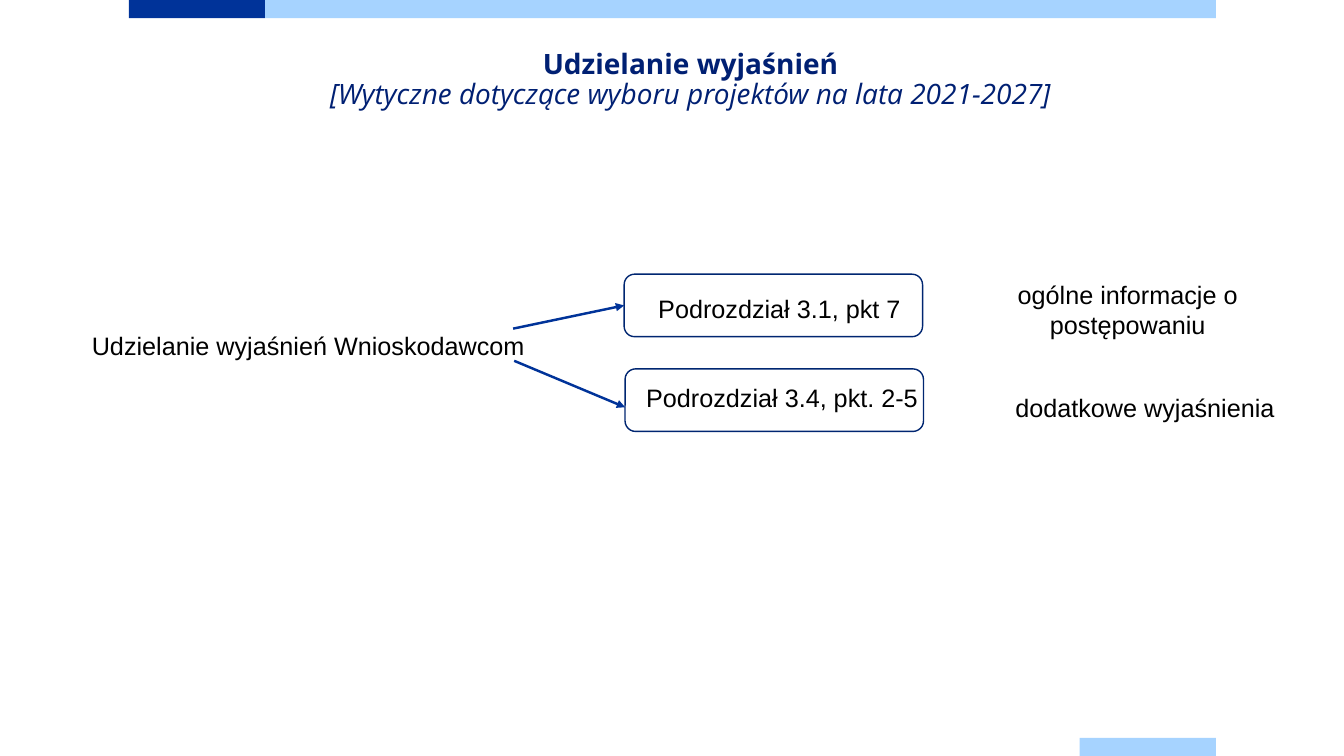
from pptx import Presentation
from pptx.dml.color import RGBColor
from pptx.enum.shapes import MSO_CONNECTOR, MSO_SHAPE
from pptx.enum.text import MSO_ANCHOR, MSO_AUTO_SIZE, PP_ALIGN
from pptx.oxml.ns import qn
from pptx.util import Inches, Pt
from lxml.etree import SubElement

WIDE, HIGH = Inches(13.33), Inches(7.5)
BLUE = RGBColor(0x00, 0x33, 0x99)
SKY = RGBColor(0xA6, 0xD3, 0xFF)
NAVY = RGBColor(0x00, 0x20, 0x73)
EDGE = RGBColor(0x00, 0x26, 0x71)
BLACK = RGBColor(0, 0, 0)
BAR_H = 2.4
BOX_W, BOX_H = 22.2, 8.27


def area(x, y, w, h):
    """Turn percentages of the slide into left, top, width and height."""
    return [int(side * part / 100)
            for side, part in zip((WIDE, HIGH, WIDE, HIGH), (x, y, w, h))]


def place(shape, *spot):
    shape.left, shape.top, shape.width, shape.height = area(*spot)


def style(para, size, name, color):
    for run in para.runs:
        font = run.font
        font.size, font.name = Pt(size), name
        font.color.rgb = color


def trim(frame):
    """Drop the insets and fix the text to the top of its frame."""
    frame.margin_left = frame.margin_right = 0
    frame.margin_top = frame.margin_bottom = 0
    frame.vertical_anchor = MSO_ANCHOR.TOP
    frame.auto_size = MSO_AUTO_SIZE.NONE


def add_bar(slide, x, y, w, color):
    bar = slide.shapes.add_shape(MSO_SHAPE.RECTANGLE, *area(x, y, w, BAR_H))
    bar.shadow.inherit = False
    bar.fill.solid()
    bar.fill.fore_color.rgb = color
    bar.line.fill.background()


def set_title(slide, head, note):
    title = slide.shapes.title
    place(title, 9.6, 6.67, 83.57, 14.27)
    frame = title.text_frame
    trim(frame)
    frame.text = f"{head}\n{note}"
    for para in frame.paragraphs:
        para.alignment = PP_ALIGN.CENTER
        para.line_spacing = 0.9
        style(para, 20, "Open Sans", NAVY)
    first, last = frame.paragraphs
    first.runs[0].font.bold = True
    last.runs[0].font.bold = False
    last.runs[0].font.italic = True


def set_body(slide, text):
    body = slide.placeholders[1]
    place(body, 6.83, 43.73, 36, 5)
    frame = body.text_frame
    trim(frame)
    frame.text = text
    para = frame.paragraphs[0]
    props = para._p.get_or_add_pPr()
    props.set("marL", "0")
    props.set("indent", "0")
    SubElement(props, qn("a:buNone"))
    para.space_before = Pt(0)
    style(para, 18, "Arial", BLACK)


def add_box(slide, x, y):
    box = slide.shapes.add_shape(MSO_SHAPE.ROUNDED_RECTANGLE,
                                 *area(x, y, BOX_W, BOX_H))
    box.shadow.inherit = False
    box.fill.background()
    box.line.color.rgb = EDGE
    box.line.width = Pt(1)


def add_label(slide, text, spot, align=PP_ALIGN.LEFT):
    frame = slide.shapes.add_textbox(*area(*spot)).text_frame
    frame.word_wrap = True
    frame.text = text
    para = frame.paragraphs[0]
    para.alignment = align
    style(para, 18, "Arial", BLACK)


def add_arrow(slide, *ends):
    arrow = slide.shapes.add_connector(MSO_CONNECTOR.STRAIGHT, *area(*ends))
    arrow.line.color.rgb = BLUE
    arrow.line.width = Pt(1.75)
    SubElement(arrow.line._get_or_add_ln(), qn("a:tailEnd"), type="triangle")
    SubElement(arrow._element.spPr, qn("a:effectLst"))


def main():
    deck = Presentation()
    deck.slide_width, deck.slide_height = WIDE, HIGH
    slide = deck.slides.add_slide(deck.slide_layouts[1])

    add_bar(slide, 9.6, 0, 10.13, BLUE)
    add_bar(slide, 19.73, 0, 70.74, SKY)
    add_bar(slide, 80.34, 100 - BAR_H, 10.13, SKY)

    set_title(slide, "Udzielanie wyjaśnień",
              "[Wytyczne dotyczące wyboru projektów na lata 2021-2027]")
    set_body(slide, "Udzielanie wyjaśnień Wnioskodawcom")

    add_box(slide, 46.44, 36.27)
    add_box(slide, 46.51, 48.8)
    add_label(slide, "Podrozdział 3.1, pkt 7", (48.24, 38.13, 20.41, 5.33))
    add_label(slide, "Podrozdział 3.4, pkt. 2-5", (47.34, 49.87, BOX_W, 5.33))
    add_label(slide, "ogólne informacje o postępowaniu",
              (71.34, 36.27, 25.13, 9.47), PP_ALIGN.CENTER)
    add_label(slide, "dodatkowe wyjaśnienia",
              (72.62, 51.2, 25.13, 5.33), PP_ALIGN.CENTER)

    add_arrow(slide, 38.18, 43.47, 46.44, 40.4)
    add_arrow(slide, 38.26, 47.73, 46.51, 53.87)
    deck.save("out.pptx")


if __name__ == "__main__":
    main()
